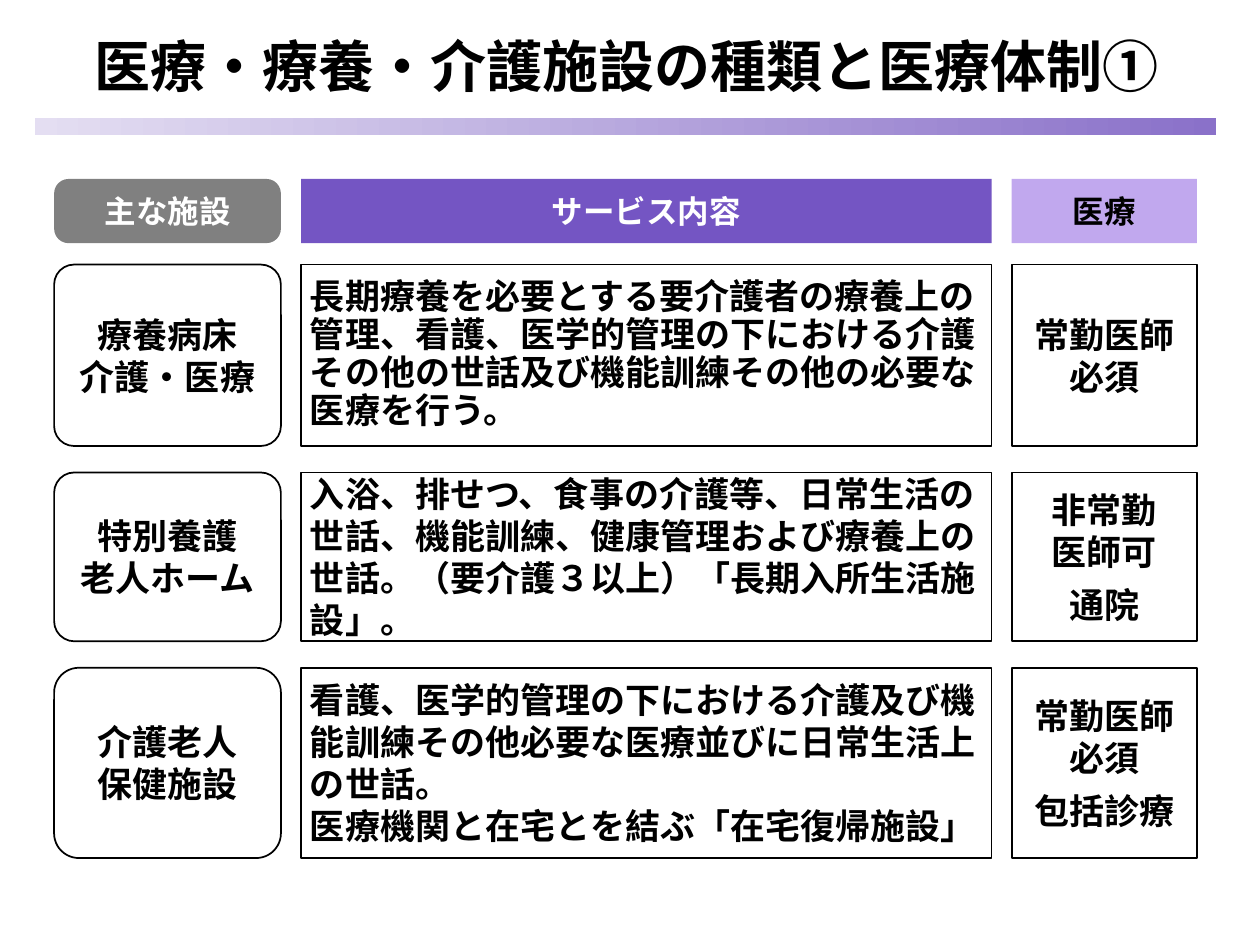
"""Build a slide comparing care facilities, their services and medical cover."""
from lxml import etree
from pptx import Presentation
from pptx.dml.color import RGBColor
from pptx.enum.shapes import MSO_SHAPE
from pptx.enum.text import MSO_ANCHOR, MSO_AUTO_SIZE, PP_ALIGN
from pptx.oxml.ns import qn
from pptx.util import Inches, Pt

RECTANGLE = MSO_SHAPE.RECTANGLE
ROUNDED = MSO_SHAPE.ROUNDED_RECTANGLE
MIDDLE = MSO_ANCHOR.MIDDLE
NO_AUTOFIT = MSO_AUTO_SIZE.NONE
LEFT = PP_ALIGN.LEFT
CENTER = PP_ALIGN.CENTER

TITLE_ONLY = 5
FONT = "Noto Sans CJK JP"
COLORS = {
    "black": "000000",
    "white": "FFFFFF",
    "gray": "808080",
    "purple": "7455C3",
    "lilac": "C1A8EE",
    "bar_start": "E4DEF2",
    "bar_end": "8A71C9",
}

COLUMNS = [(0.43, 1.8), (2.39, 5.48), (8.03, 1.47)]
HEADER_TOP, HEADER_HEIGHT = 1.42, 0.51
HEADERS = [
    ("主な施設", "gray", "white", 0.225),
    ("サービス内容", "purple", "white", None),
    ("医療", "lilac", "black", None),
]
FACILITIES = [
    {
        "top": 2.1, "height": 1.44, "corner": 0.11,
        "name": ["療養病床", "介護・医療"],
        "service": ["長期療養を必要とする要介護者の療養上の管理、看護、医学的管理の下における"
                    "介護その他の世話及び機能訓練その他の必要な医療を行う。"],
        "line_spacing": 0.9, "space_before": 7.5,
        "staff": ["常勤医師必須"],
    },
    {
        "top": 3.75, "height": 1.34, "corner": 0.12,
        "name": ["特別養護", "老人ホーム"],
        "service": ["入浴、排せつ、食事の介護等、日常生活の世話、機能訓練、健康管理および"
                    "療養上の世話。（要介護３以上）「長期入所生活施設」。"],
        "staff": ["非常勤", "医師可"],
        "note": "通院",
    },
    {
        "top": 5.3, "height": 1.51, "corner": 0.13,
        "name": ["介護老人", "保健施設"],
        "service": ["看護、医学的管理の下における介護及び機能訓練その他必要な医療並びに"
                    "日常生活上の世話。",
                    "医療機関と在宅とを結ぶ「在宅復帰施設」"],
        "staff": ["常勤医師必須"],
        "note": "包括診療",
    },
]


class SlideBuilder:
    """Hold the shared style and add elements to the current slide."""

    def __init__(self, slide):
        self.slide = slide

    def color(self, name):
        """Return the named colour."""
        return RGBColor.from_string(COLORS[name])

    def add_text(self, paragraph, text, size, color="black", align=CENTER):
        """Add one bold run to a paragraph."""
        paragraph.alignment = align
        run = paragraph.add_run()
        run.text = text
        run.font.size = Pt(size)
        run.font.bold = True
        run.font.name = FONT
        run.font.color.rgb = self.color(color)
        properties = run._r.get_or_add_rPr()
        etree.SubElement(properties, qn("a:ea")).set("typeface", FONT)

    def title(self, text, left, top, width, height):
        """Place and fill the title placeholder."""
        shape = self.slide.shapes.title
        shape.left, shape.top = Inches(left), Inches(top)
        shape.width, shape.height = Inches(width), Inches(height)
        frame = shape.text_frame
        frame.auto_size = NO_AUTOFIT
        frame.vertical_anchor = MIDDLE
        self.add_text(frame.paragraphs[0], text, 32)

    def shape(self, left, top, width, height, corner=None):
        """Add a plain rectangle, rounded when a corner ratio is given."""
        kind = ROUNDED if corner else RECTANGLE
        shape = self.slide.shapes.add_shape(
            kind, Inches(left), Inches(top), Inches(width), Inches(height))
        shape.shadow.inherit = False
        shape.line.fill.background()
        if corner:
            shape.adjustments[0] = corner
        return shape

    def gradient_bar(self, left, top, width, height):
        """Add the bar that fades from left to right."""
        fill = self.shape(left, top, width, height).fill
        fill.gradient()
        fill.gradient_angle = 0
        for stop, name in zip(fill.gradient_stops, ("bar_start", "bar_end")):
            stop.color.rgb = self.color(name)

    def box(self, place, lines, size=20, fill=None, color="black",
            align=CENTER, corner=None):
        """Add a filled or outlined text box and return its paragraphs."""
        shape = self.shape(*place, corner)
        if fill:
            shape.fill.solid()
            shape.fill.fore_color.rgb = self.color(fill)
        else:
            shape.fill.background()
            shape.line.color.rgb = self.color("black")
            shape.line.width = Pt(1)
        frame = shape.text_frame
        frame.word_wrap = True
        frame.vertical_anchor = MIDDLE
        frame.margin_left = frame.margin_right = Inches(0.07)
        frame.margin_top = frame.margin_bottom = Inches(0.04)
        for index, line in enumerate(lines):
            paragraph = frame.add_paragraph() if index else frame.paragraphs[0]
            self.add_text(paragraph, line, size, color, align)
        return frame.paragraphs

    def header_row(self):
        """Add the column headings."""
        for (left, width), (text, fill, color, corner) in zip(COLUMNS, HEADERS):
            place = (left, HEADER_TOP, width, HEADER_HEIGHT)
            self.box(place, [text], 18, fill, color, corner=corner)

    def facility_row(self, facility):
        """Add the name, service and medical boxes of one facility."""
        name_place, service_place, staff_place = [
            (left, facility["top"], width, facility["height"])
            for left, width in COLUMNS]
        self.box(name_place, facility["name"], corner=facility["corner"])
        service = self.box(service_place, facility["service"], align=LEFT)
        if "line_spacing" in facility:
            service[0].line_spacing = facility["line_spacing"]
            service[0].space_before = Pt(facility["space_before"])
        notes = [facility["note"]] if "note" in facility else []
        staff = self.box(staff_place, facility["staff"] + notes)
        if notes:
            staff[-1].space_before = Pt(6)


def main():
    """Create and save the presentation."""
    presentation = Presentation()
    presentation.slide_width = Inches(10)
    presentation.slide_height = Inches(7.5)
    layout = presentation.slide_layouts[TITLE_ONLY]
    builder = SlideBuilder(presentation.slides.add_slide(layout))
    builder.title("医療・療養・介護施設の種類と医療体制①", 0.61, 0.19, 8.73, 0.66)
    builder.gradient_bar(0.28, 0.94, 9.37, 0.13)
    builder.header_row()
    for facility in FACILITIES:
        builder.facility_row(facility)
    presentation.save("out.pptx")


if __name__ == "__main__":
    main()
